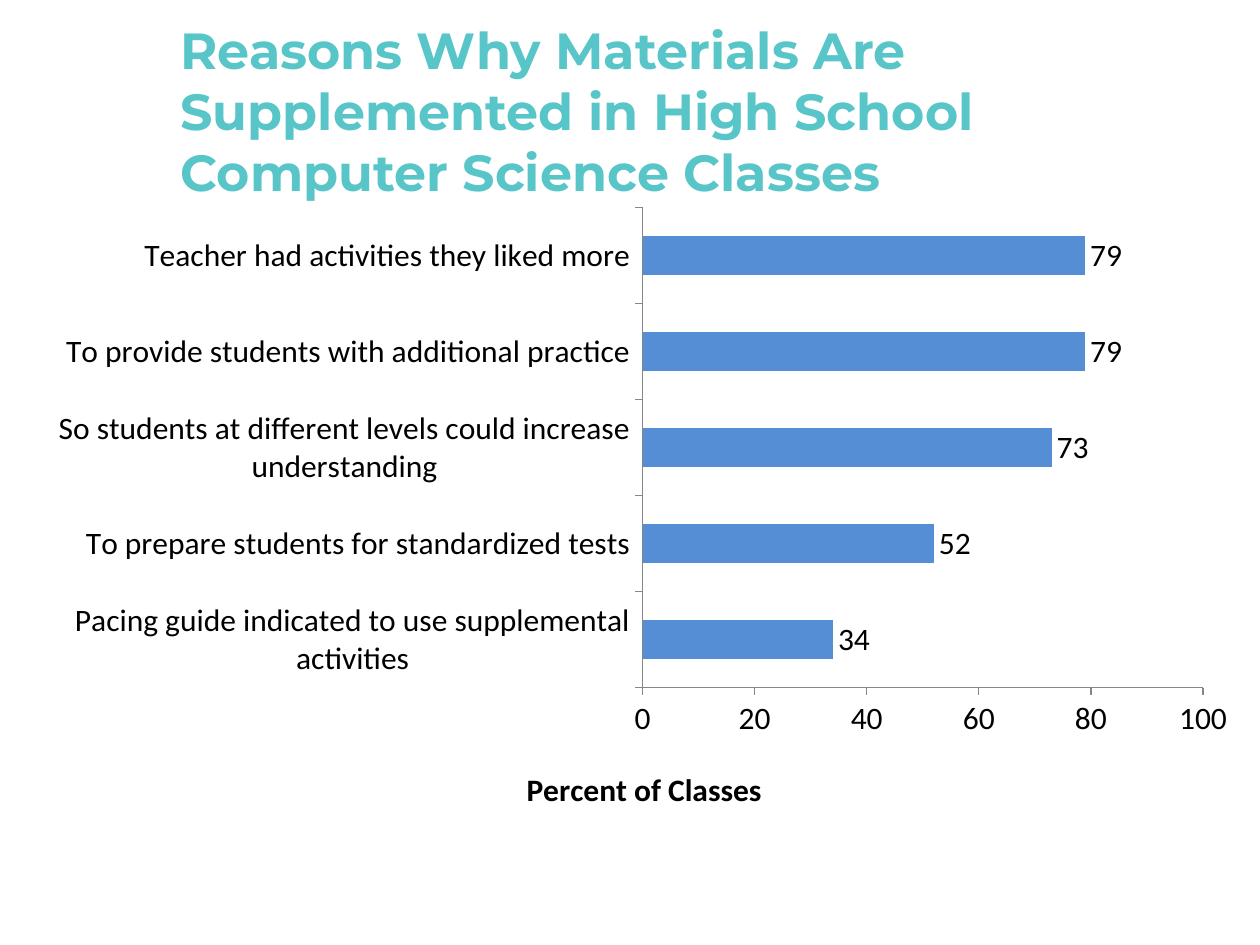
from lxml.etree import SubElement
from pptx import Presentation
from pptx.chart.data import CategoryChartData
from pptx.dml.color import RGBColor
from pptx.enum.chart import XL_CHART_TYPE as ChartType, XL_LABEL_POSITION as LabelPosition
from pptx.enum.chart import XL_TICK_MARK as TickMark
from pptx.enum.text import MSO_ANCHOR as Anchor
from pptx.oxml.ns import qn
from pptx.util import Cm, Pt

TEAL = RGBColor(0x58, 0xC5, 0xC9)
BLUE = RGBColor(0x55, 0x8E, 0xD5)
GRAY = RGBColor(0x86, 0x86, 0x86)
BLACK = RGBColor(0, 0, 0)

HEADING = "Reasons Why Materials Are Supplemented in High School Computer Science Classes"
REASONS = {
    "Pacing guide indicated to use supplemental activities": 34,
    "To prepare students for standardized tests": 52,
    "So students at different levels could increase understanding": 73,
    "To provide students with additional practice": 79,
    "Teacher had activities they liked more": 79,
}


def set_font(font, name, size, color, bold=False):
    font.name = name
    font.size = Pt(size)
    font.bold = bold
    font.color.rgb = color


def set_layout(layout, **settings):
    for child in list(layout):
        layout.remove(child)
    manual = SubElement(layout, qn("c:manualLayout"))
    for tag, value in settings.items():
        SubElement(manual, qn(f"c:{tag}")).set("val", str(value))


def style_axis(axis):
    axis.has_major_gridlines = False
    axis.major_tick_mark = TickMark.OUTSIDE
    axis.minor_tick_mark = TickMark.NONE
    axis.format.line.color.rgb = GRAY
    axis.format.line.width = Pt(0.75)
    set_font(axis.tick_labels.font, "Calibri", 18, BLACK)


def add_axis_title(axis, text):
    frame = axis.axis_title.text_frame
    frame.text = text
    set_font(frame.paragraphs[0].runs[0].font, "Calibri", 18, BLACK, bold=True)
    title = axis.axis_title._element
    layout = title.find(qn("c:layout"))
    if layout is None:
        layout = SubElement(title, qn("c:layout"))
        title.find(qn("c:tx")).addnext(layout)
    set_layout(layout, xMode="edge", yMode="edge", x=0.41, y=0.92)


def add_heading(slide):
    box = slide.shapes.add_textbox(Cm(3.39), Cm(0.64), Cm(20.75), Cm(3.18))
    frame = box.text_frame
    frame.word_wrap = True
    frame.vertical_anchor = Anchor.MIDDLE
    frame.text = HEADING
    set_font(frame.paragraphs[0].runs[0].font, "Montserrat", 29, TEAL, bold=True)


def add_reasons_chart(slide):
    data = CategoryChartData()
    data.categories = list(REASONS)
    data.add_series("Series 1", list(REASONS.values()))
    chart = slide.shapes.add_chart(
        ChartType.BAR_CLUSTERED, Cm(0.43), Cm(3.81), Cm(24.56), Cm(12.7), data
    ).chart
    chart.has_legend = False
    chart.has_title = False
    set_font(chart.font, "Calibri", 18, BLACK)

    plot = chart.plots[0]
    plot.gap_width = 150
    plot.vary_by_categories = False
    bars = plot.series[0]
    bars.format.fill.solid()
    bars.format.fill.fore_color.rgb = BLUE
    labels = bars.data_labels
    labels.show_value = True
    labels.position = LabelPosition.OUTSIDE_END
    set_font(labels.font, "Calibri", 18, BLACK)

    percent = chart.value_axis
    percent.minimum_scale = 0
    percent.maximum_scale = 100
    percent.major_unit = 20
    style_axis(chart.category_axis)
    style_axis(percent)
    add_axis_title(percent, "Percent of Classes")

    plot_area = chart._chartSpace.chart.plotArea
    layout = plot_area.find(qn("c:layout"))
    if layout is None:
        layout = SubElement(plot_area, qn("c:layout"))
        plot_area.insert(0, layout)
    set_layout(layout, layoutTarget="inner", xMode="edge", yMode="edge",
               x=0.51, y=0.03, w=0.46, h=0.77)


def main():
    deck = Presentation()
    deck.slide_width = Cm(25.4)
    deck.slide_height = Cm(19.05)
    slide = deck.slides.add_slide(deck.slide_layouts[6])
    add_reasons_chart(slide)
    add_heading(slide)
    deck.save("out.pptx")


if __name__ == "__main__":
    main()
